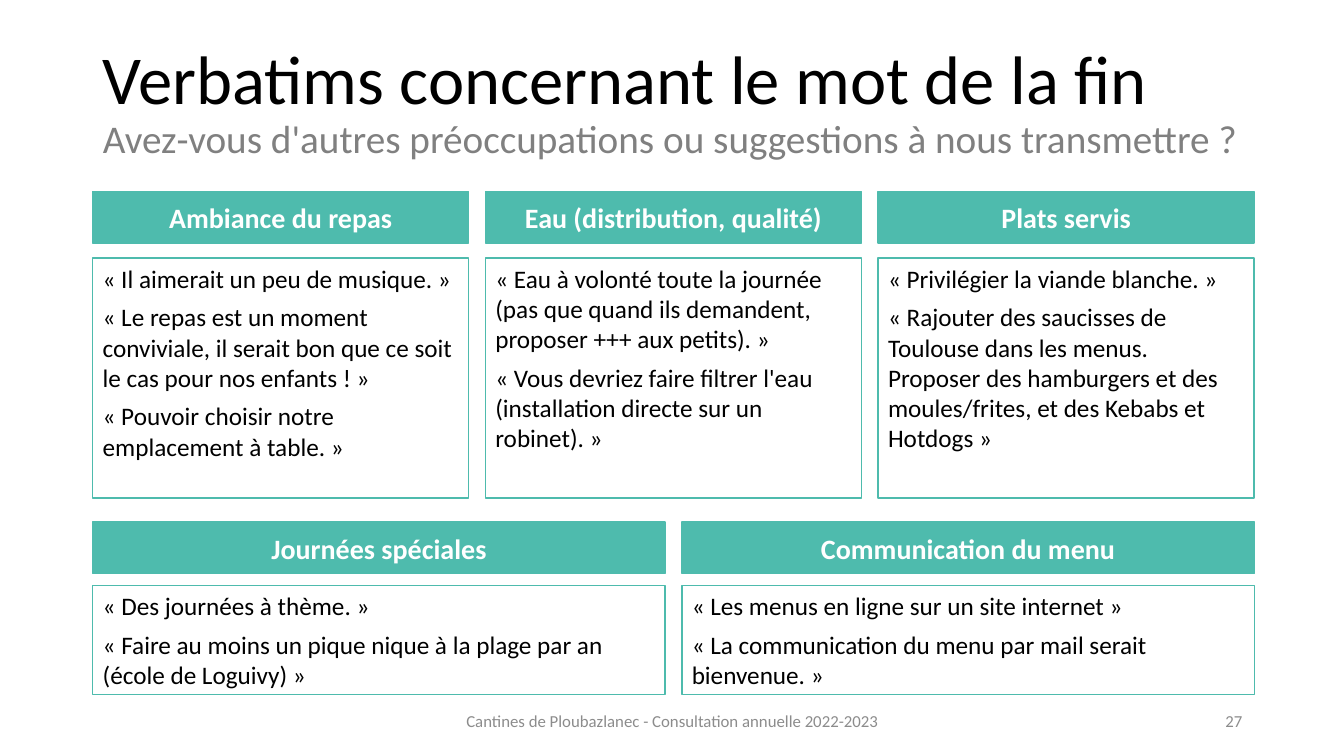
from dataclasses import dataclass

from pptx import Presentation
from pptx.dml.color import RGBColor
from pptx.enum.shapes import MSO_SHAPE
from pptx.enum.text import MSO_ANCHOR, MSO_AUTO_SIZE, PP_ALIGN
from pptx.util import Inches, Pt

TITLE = "Verbatims concernant le mot de la fin"
QUESTION = "Avez-vous d'autres préoccupations ou suggestions à nous transmettre ?"
FOOTER = "Cantines de Ploubazlanec - Consultation annuelle 2022-2023"
PAGE_NUMBER = "27"

TOP_TOPICS = [
    ("Ambiance du repas", [
        "Il aimerait un peu de musique.",
        "Le repas est un moment conviviale, il serait bon que ce soit le cas pour nos enfants !",
        "Pouvoir choisir notre emplacement à table.",
    ]),
    ("Eau (distribution, qualité)", [
        "Eau à volonté toute la journée (pas que quand ils demandent, proposer +++ aux petits).",
        "Vous devriez faire filtrer l'eau (installation directe sur un robinet).",
    ]),
    ("Plats servis", [
        "Privilégier la viande blanche.",
        "Rajouter des saucisses de Toulouse dans les menus. Proposer des hamburgers et des "
        "moules/frites, et des Kebabs et Hotdogs",
    ]),
]
BOTTOM_TOPICS = [
    ("Journées spéciales", [
        "Des journées à thème.",
        "Faire au moins un pique nique à la plage par an (école de Loguivy)",
    ]),
    ("Communication du menu", [
        "Les menus en ligne sur un site internet",
        "La communication du menu par mail serait bienvenue.",
    ]),
]
ROWS = [
    {"topics": TOP_TOPICS, "header_top": 1.9, "quotes_top": 2.56, "quotes_height": 2.38},
    {"topics": BOTTOM_TOPICS, "header_top": 5.18, "quotes_top": 5.81, "quotes_height": 1.08},
]

LEFT = 0.92
CONTENT_WIDTH = 11.52
GAP = 0.165
HEADER_HEIGHT = 0.51


@dataclass(frozen=True)
class Theme:
    font: str = "Calibri"
    accent: RGBColor = RGBColor(0x4E, 0xBB, 0xAD)
    dark: RGBColor = RGBColor(0, 0, 0)
    light: RGBColor = RGBColor(0xFF, 0xFF, 0xFF)
    question: RGBColor = RGBColor(0x80, 0x80, 0x80)
    footer: RGBColor = RGBColor(0x8C, 0x8C, 0x8C)
    title_size: int = 49
    question_size: int = 28
    header_size: int = 20
    quote_size: int = 18
    footer_size: int = 12


THEME = Theme()


def format_run(run, size, color, bold=False):
    run.font.name = THEME.font
    run.font.size = Pt(size)
    run.font.color.rgb = color
    run.font.bold = bold


def write(shape, lines, size, color, alignment, anchor, bold=False, space_after=0):
    frame = shape.text_frame
    frame.word_wrap = True
    frame.vertical_anchor = anchor
    frame.text = "\n".join(lines)
    for paragraph in frame.paragraphs:
        paragraph.alignment = alignment
        paragraph.space_after = Pt(space_after)
        for run in paragraph.runs:
            format_run(run, size, color, bold)


def add_box(slide, left, top, width, height, filled):
    shape = slide.shapes.add_shape(
        MSO_SHAPE.RECTANGLE, Inches(left), Inches(top), Inches(width), Inches(height))
    shape.shadow.inherit = False
    if filled:
        shape.fill.solid()
        shape.fill.fore_color.rgb = THEME.accent
    else:
        shape.fill.background()
    shape.line.color.rgb = THEME.accent
    shape.line.width = Pt(1)
    return shape


def add_title(slide):
    title = slide.shapes.title
    title.left, title.top = Inches(LEFT), Inches(0.4)
    title.width, title.height = Inches(11.97), Inches(1.45)
    frame = title.text_frame
    frame.word_wrap = True
    frame.auto_size = MSO_AUTO_SIZE.NONE
    frame.vertical_anchor = MSO_ANCHOR.TOP
    paragraph = frame.paragraphs[0]
    paragraph.text = f"{TITLE}\v{QUESTION}"
    paragraph.alignment = PP_ALIGN.LEFT
    paragraph.line_spacing = 0.9
    title_run, question_run = paragraph.runs
    format_run(title_run, THEME.title_size, THEME.dark)
    format_run(question_run, THEME.question_size, THEME.question)


def add_row(slide, topics, header_top, quotes_top, quotes_height):
    width = (CONTENT_WIDTH - GAP * (len(topics) - 1)) / len(topics)
    for column, (name, quotes) in enumerate(topics):
        left = LEFT + column * (width + GAP)
        header = add_box(slide, left, header_top, width, HEADER_HEIGHT, True)
        write(header, [name], THEME.header_size, THEME.light,
              PP_ALIGN.CENTER, MSO_ANCHOR.MIDDLE, bold=True)
        box = add_box(slide, left, quotes_top, width, quotes_height, False)
        write(box, [f"« {quote} »" for quote in quotes], THEME.quote_size, THEME.dark,
              PP_ALIGN.LEFT, MSO_ANCHOR.TOP, space_after=6)


def add_footer(slide, text, left, width, alignment):
    box = slide.shapes.add_textbox(Inches(left), Inches(6.95), Inches(width), Inches(0.4))
    write(box, [text], THEME.footer_size, THEME.footer, alignment, MSO_ANCHOR.MIDDLE)


def main():
    presentation = Presentation()
    presentation.slide_width = Inches(13.33)
    presentation.slide_height = Inches(7.5)
    slide = presentation.slides.add_slide(presentation.slide_layouts[5])
    add_title(slide)
    for row in ROWS:
        add_row(slide, **row)
    add_footer(slide, FOOTER, 4.42, 4.5, PP_ALIGN.CENTER)
    add_footer(slide, PAGE_NUMBER, 9.42, 3, PP_ALIGN.RIGHT)
    presentation.save("out.pptx")


if __name__ == "__main__":
    main()
